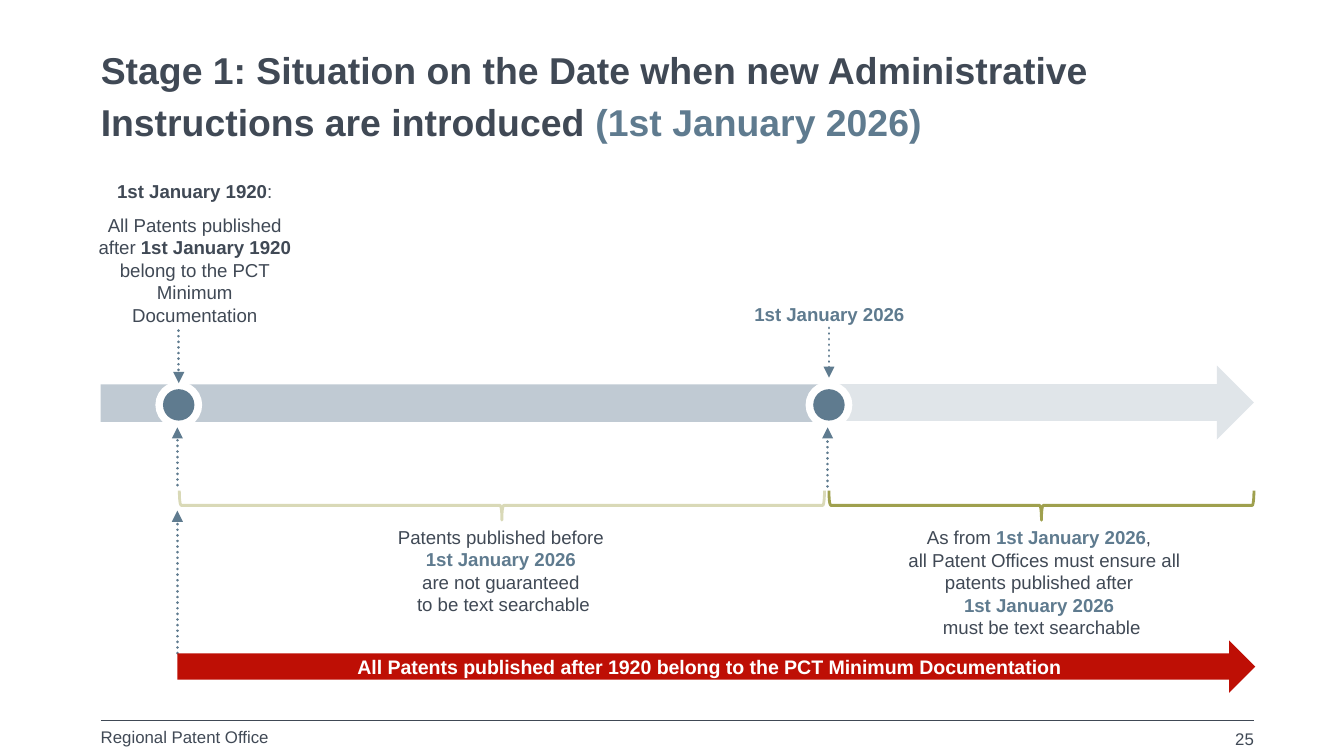
from dataclasses import dataclass
from typing import NamedTuple

from lxml import etree
from pptx import Presentation
from pptx import util as u
from pptx.dml import color
from pptx.enum import dml, shapes, text
from pptx.oxml import ns


@dataclass(frozen=True)
class Theme:
    font: str = "Arial"
    ink: str = "404955"
    accent: str = "5F7B8F"
    past: str = "C0CAD3"
    future: str = "E0E5E9"
    white: str = "FFFFFF"
    alert: str = "BE0F05"
    olive: str = "9FA04E"
    pale_olive: str = "D9D9B7"
    title: float = 20
    body: float = 10
    banner: float = 10.5
    footer: float = 9


THEME = Theme()
COLUMNS, ROWS = 100, 56.25
CELL = u.Inches(0.1)
LEFT, RIGHT = 7.5, 93.3
AXIS = 30.13
START, REFORM = 13.3, 61.68
SHAPE = shapes.MSO_SHAPE
ALIGN = text.PP_ALIGN
ANCHOR = text.MSO_ANCHOR


class Box(NamedTuple):
    col: float
    row: float
    cols: float
    rows: float


class Span(NamedTuple):
    words: str
    hue: str = THEME.ink
    bold: bool = False


class Line(NamedTuple):
    spans: list[Span]
    form: dict = {}


@dataclass(frozen=True)
class Label:
    box: Box
    lines: list[Line]
    size: float = THEME.body
    align: ALIGN = ALIGN.CENTER
    anchor: ANCHOR = ANCHOR.BOTTOM
    bottom_inset: float = 0.2
    fit: text.MSO_AUTO_SIZE = text.MSO_AUTO_SIZE.SHAPE_TO_FIT_TEXT


@dataclass(frozen=True)
class Pointer:
    col: float
    tail_row: float
    tip_row: float


def grid(cells: float) -> int:
    return round(cells * CELL)


def rgb(hue: str) -> color.RGBColor:
    return color.RGBColor.from_string(hue)


def apply(target, values: dict) -> None:
    for name, value in values.items():
        setattr(target, name, value)


def write(frame, lines: list[Line], size: float, align) -> None:
    for index, line in enumerate(lines):
        paragraph = frame.add_paragraph() if index else frame.paragraphs[0]
        apply(paragraph, {"alignment": align, **line.form})
        for span in line.spans:
            for part, words in enumerate(span.words.split("\n")):
                if part:
                    paragraph.add_line_break()
                run = paragraph.add_run()
                run.text = words
                apply(run.font, {"name": THEME.font, "size": u.Pt(size), "bold": span.bold})
                run.font.color.rgb = rgb(span.hue)


def add_label(slide, label: Label) -> None:
    frame = slide.shapes.add_textbox(*map(grid, label.box)).text_frame
    apply(frame, {
        "word_wrap": True, "auto_size": label.fit, "vertical_anchor": label.anchor,
        "margin_left": 0, "margin_right": 0, "margin_top": 0,
        "margin_bottom": grid(label.bottom_inset),
    })
    write(frame, label.lines, label.size, label.align)


def add_figure(slide, kind, box: Box, fill: str | None = None,
               outline: str | None = None, weight: float = 1.5):
    figure = slide.shapes.add_shape(kind, *map(grid, box))
    figure.shadow.inherit = False
    if fill:
        figure.fill.solid()
        figure.fill.fore_color.rgb = rgb(fill)
    else:
        figure.fill.background()
    if outline:
        figure.line.color.rgb = rgb(outline)
        figure.line.width = u.Pt(weight)
    else:
        figure.line.fill.background()
    return figure


def add_rule(slide, ends: tuple, hue: str, weight: float):
    rule = slide.shapes.add_connector(shapes.MSO_CONNECTOR.STRAIGHT, *map(grid, ends))
    rule.line.color.rgb = rgb(hue)
    rule.line.width = u.Pt(weight)
    etree.SubElement(rule._element.spPr, ns.qn("a:effectLst"))
    return rule


def add_pointer(slide, pointer: Pointer) -> None:
    ends = (pointer.col, pointer.tail_row, pointer.col, pointer.tip_row)
    rule = add_rule(slide, ends, THEME.accent, 1.5)
    rule.line.dash_style = dml.MSO_LINE.ROUND_DOT
    stroke = rule.line._get_or_add_ln()
    stroke.set("cap", "rnd")
    etree.SubElement(stroke, ns.qn("a:tailEnd"), type="triangle")


def add_milestone(slide, col: float) -> None:
    for size, fill, outline in ((3.2, THEME.white, THEME.white), (2.34, THEME.accent, None)):
        box = Box(col - size / 2, AXIS - size / 2, size, size)
        add_figure(slide, SHAPE.OVAL, box, fill, outline, 2)


def add_brace(slide, first: float, last: float, hue: str) -> None:
    depth, span, middle = 2.2, last - first, 37.6
    box = Box((first + last - depth) / 2, middle - span / 2, depth, span)
    brace = add_figure(slide, SHAPE.LEFT_BRACE, box, outline=hue)
    brace.rotation = 270
    brace.adjustments[0] = 0.057


def add_banner(slide) -> None:
    banner = add_figure(slide, SHAPE.RIGHT_ARROW, Box(13.2, 47.65, 80.2, 3.9), THEME.alert)
    banner.text_frame.vertical_anchor = ANCHOR.MIDDLE
    words = "All Patents published after 1920 belong to the PCT Minimum Documentation"
    write(banner.text_frame, [Line([Span(words, THEME.white, True)])], THEME.banner, ALIGN.CENTER)


REFORM_LINE = Line([Span("1st January 2026 ", THEME.accent, True)])
FIXED = {"anchor": ANCHOR.TOP, "bottom_inset": 0, "fit": text.MSO_AUTO_SIZE.NONE}
LABELS = [
    Label(Box(LEFT, 54.1, 17, 1.9), [Line([Span("Regional Patent Office")])],
          THEME.footer, ALIGN.LEFT, **FIXED),
    Label(Box(70, 54.2, 23.3, 1.8), [Line([Span("25")])], THEME.footer, ALIGN.RIGHT, **FIXED),
    Label(Box(LEFT, 2.95, RIGHT - LEFT, 4.4), [Line([
        Span("Stage 1: Situation on the Date when new Administrative Instructions are introduced ",
             bold=True),
        Span("(1st January 2026)", THEME.accent, True),
    ], {"line_spacing": u.Pt(28)})], THEME.title, ALIGN.LEFT, **FIXED),
    Label(Box(55.75, 22.7, 11.9, 1.7),
          [Line([Span("1st January 2026", THEME.accent, True)], {"line_spacing": 0.9})]),
    Label(Box(24.9, 39.1, 25.1, 6.9), [
        Line([Span("Patents published before ")]),
        REFORM_LINE,
        Line([Span("are not guaranteed \nto be text searchable")]),
    ]),
    Label(Box(64.95, 39.1, 25.1, 8.6), [
        Line([Span("As from "), Span("1st January 2026", THEME.accent, True), Span(", ")]),
        Line([Span(" all Patent Offices must ensure all patents published after ")]),
        REFORM_LINE,
        Line([Span("must be text searchable")]),
    ]),
    Label(Box(7.03, 13.35, 14.9, 11.1), [
        Line([Span("1st January 1920", bold=True), Span(":")], {"space_after": u.Pt(6)}),
        Line([Span("All Patents published after "), Span("1st January 1920 ", bold=True),
              Span("belong to the PCT Minimum Documentation")]),
    ]),
]
POINTERS = [
    Pointer(START, 24.6, 28.5), Pointer(REFORM, 24.4, 28.1),
    Pointer(REFORM - 0.1, 36.2, 31.8), Pointer(START - 0.1, 36.1, 31.8),
    Pointer(START - 0.1, 48.6, 38),
]


def main() -> None:
    deck = Presentation()
    apply(deck, {"slide_width": grid(COLUMNS), "slide_height": grid(ROWS)})
    slide = deck.slides.add_slide(deck.slide_layouts[6])
    add_rule(slide, (LEFT, 53.6, RIGHT, 53.6), THEME.ink, 0.75)
    add_figure(slide, SHAPE.RECTANGLE, Box(LEFT, 28.6, 54, 2.8), THEME.past)
    add_figure(slide, SHAPE.RIGHT_ARROW, Box(60.9, 27.2, 32.4, 5.5), THEME.future)
    for col in (START, REFORM):
        add_milestone(slide, col)
    for pointer in POINTERS:
        add_pointer(slide, pointer)
    add_brace(slide, 13.35, 61.35, THEME.pale_olive)
    add_brace(slide, REFORM, RIGHT, THEME.olive)
    add_banner(slide)
    for label in LABELS:
        add_label(slide, label)
    deck.save("out.pptx")


if __name__ == "__main__":
    main()
